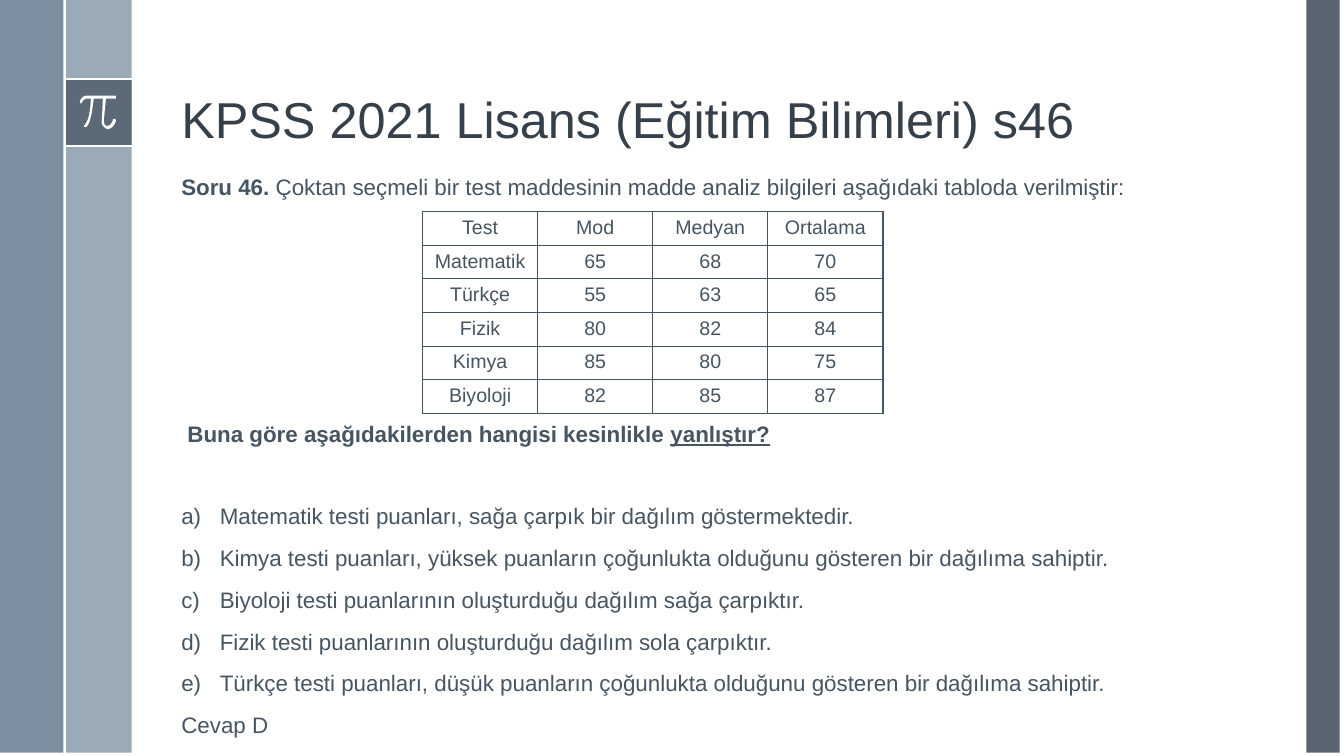
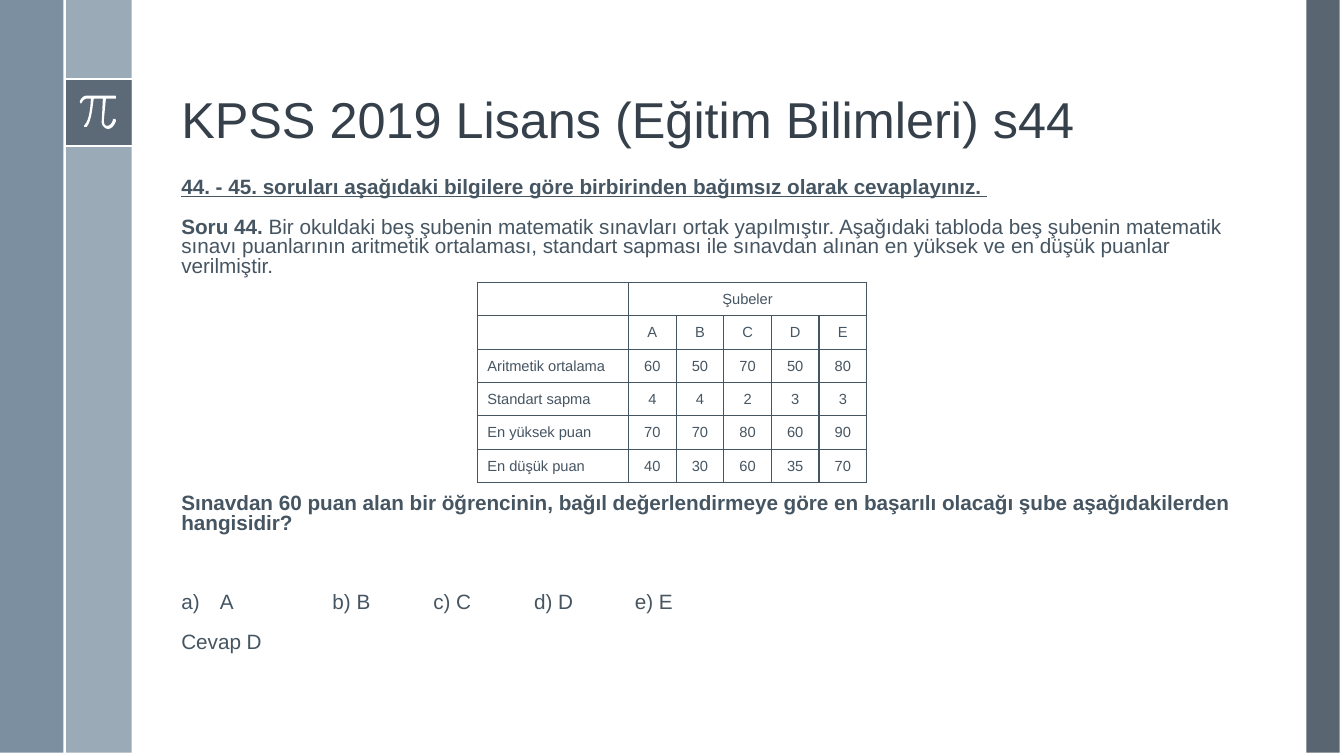
from lxml import etree
from pptx import Presentation
from pptx.dml.color import RGBColor
from pptx.enum.shapes import MSO_CONNECTOR, MSO_SHAPE
from pptx.enum.text import MSO_ANCHOR, PP_ALIGN
from pptx.oxml.ns import qn
from pptx.util import Cm, Pt

RECT = MSO_SHAPE.RECTANGLE
LINE = MSO_CONNECTOR.STRAIGHT
TOP, MID, LOW = MSO_ANCHOR.TOP, MSO_ANCHOR.MIDDLE, MSO_ANCHOR.BOTTOM
LEFT, MIDST = PP_ALIGN.LEFT, PP_ALIGN.CENTER

FONT = "Arial"
WHITE, INK, HEAD = "FFFFFF", "465562", "35404A"
SLATE, MIST, STEEL = "475562", "9BAAB7", "6A8093"
TEXT_X, TEXT_W, TEXT_Y = 4.32, 27.18, 4.37

PI = [
    [(7, 0)], [(2, 0), (0, 6), (0, 6)], [(1, 8)], [(2, 7)],
    [(2, 7), (4, 3), (7, 3)], [(11, 3)], [(11, 8), (10, 24), (5, 29)],
    [(4, 30), (4, 31), (5, 31)], [(7, 31)], [(12, 25), (13, 8), (14, 3)],
    [(23, 3)], [(22, 24)], [(22, 24), (21, 29), (24, 31)],
    [(25, 32), (26, 33), (28, 33)], [(29, 33)],
    [(34, 32), (36, 25), (36, 25)], [(36, 24), (35, 23), (35, 23)],
    [(34, 23), (33, 23), (33, 24)], [(33, 24), (32, 29), (28, 30)],
    [(27, 30), (26, 30), (25, 29)], [(24, 28), (24, 25), (24, 24)],
    [(26, 3)], [(35, 3)], [(36, 3), (36, 3), (36, 2)],
    [(36, 1), (36, 0), (35, 0)],
]


def tint(code):
    return RGBColor.from_string(code)


def node(root, tag, **atts):
    return etree.SubElement(root, qn(tag), **atts)


def paint(shape, code, alpha=100):
    shape.shadow.inherit = False
    shape.fill.solid()
    shape.fill.fore_color.rgb = tint(code)
    shape.line.fill.background()
    if alpha < 100:
        clr = shape.fill._xPr.find(".//" + qn("a:srgbClr"))
        node(clr, "a:alpha", val=str(alpha * 1000))


def block(slide, box, code, alpha=100):
    paint(slide.shapes.add_shape(RECT, *map(Cm, box)), code, alpha)


def rule(slide, *ends):
    line = slide.shapes.add_connector(LINE, *map(Cm, ends))
    line.line.color.rgb = tint(WHITE)
    line.line.width = Pt(1.5)
    node(line._element.spPr, "a:effectLst")


def trace(start, parts, steps=8):
    pts = [start]
    for part in parts:
        if len(part) == 1:
            pts += part
            continue
        a, (b, c, d) = pts[-1], part
        for i in range(1, steps + 1):
            t = i / steps
            u = 1 - t
            pts.append(tuple(
                u ** 3 * a[k] + 3 * u * u * t * b[k]
                + 3 * u * t * t * c[k] + t ** 3 * d[k] for k in (0, 1)))
    return [(x * 100, y * 100) for x, y in pts]


def sign(slide, x, y):
    pts = trace((35, 0), PI)
    form = slide.shapes.build_freeform(*pts[0], scale=Cm(0.0254) / 100)
    form.add_line_segments(pts[1:], close=True)
    paint(form.convert_to_shape(Cm(x), Cm(y)), WHITE)


def frame(slide):
    block(slide, (32.92, 0, 0.84, 18.97), SLATE, 90)
    x, y, size = 1.63, 1.98, 1.69
    block(slide, (x, 0, size, 18.97), MIST)
    block(slide, (0, 0, x - 0.03, 18.97), STEEL, 88)
    block(slide, (x, y, size, size), SLATE, 75)
    for edge in (y, y + size):
        rule(slide, x, edge, x + size, edge)
    sign(slide, x + 0.38, y + 0.43)
    rule(slide, x, 0, x, 18.97)


def write(para, runs, size, code=INK):
    for text, style in runs:
        run = para.add_run()
        run.text = text
        font = run.font
        font.name, font.size = FONT, Pt(size)
        font.color.rgb = tint(code)
        font.bold = "b" in style
        font.underline = "u" in style


def text(slide, box, paras, size, gap=0, code=INK, lead=0.8, anchor=TOP):
    area = slide.shapes.add_textbox(*map(Cm, box)).text_frame
    area.word_wrap = True
    area.vertical_anchor = anchor
    for i, runs in enumerate(paras):
        para = area.add_paragraph() if i else area.paragraphs[0]
        para.line_spacing = lead
        para.space_before = Pt(gap)
        write(para, runs, size, code)
    return area.paragraphs


def title(slide, name):
    text(slide, (TEXT_X, 0.43, TEXT_W, 3.45), [[(name, "")]], 36,
         code=HEAD, lead=0.9, anchor=LOW)


def body(slide, y, high, paras, size, gap):
    return text(slide, (TEXT_X, y, TEXT_W, high), paras, size, gap)


def choices(slide, y, items, reply, size, gap):
    paras = body(slide, y, len(items) + 1.2,
                 [[(t, "")] for t in items + [reply]], size, gap)
    for para in paras[:-1]:
        ppr = para._p.get_or_add_pPr()
        ppr.set("marL", str(Cm(0.97)))
        ppr.set("indent", str(-Cm(0.97)))
        node(ppr, "a:buFont", typeface=FONT)
        node(ppr, "a:buAutoNum", type="alphaLcParenR")


def border(cell):
    tcpr = cell._tc.get_or_add_tcPr()
    for side in "LRTB":
        line = node(tcpr, "a:ln" + side, w=str(Pt(1)))
        node(node(line, "a:solidFill"), "a:srgbClr", val=INK)
    cell.fill.background()


def grid(slide, x, y, cols, high, rows, size, anchor=TOP, left=False):
    shape = slide.shapes.add_table(
        len(rows), len(cols), Cm(x), Cm(y), Cm(sum(cols)),
        Cm(high * len(rows)))
    table = shape.table
    table.first_row = table.horz_banding = False
    for col, wide in zip(table.columns, cols):
        col.width = Cm(wide)
    for r, row in enumerate(rows):
        table.rows[r].height = Cm(high)
        for c, word in enumerate(row):
            cell = table.cell(r, c)
            border(cell)
            cell.vertical_anchor = anchor
            para = cell.text_frame.paragraphs[0]
            para.alignment = LEFT if left and c == 0 else MIDST
            if word:
                write(para, [(word, "")], size)
            else:
                node(para._p, "a:endParaRPr", sz=str(int(size * 100)))
    return table


def modes(slide):
    size, gap = 16, 14.5
    title(slide, "KPSS 2021 Lisans (Eğitim Bilimleri) s46")
    body(slide, TEXT_Y, 0.9, [[
        ("Soru 46. ", "b"),
        ("Çoktan seçmeli bir test maddesinin madde analiz bilgileri "
         "aşağıdaki tabloda verilmiştir:", "")]], size, gap)
    grid(slide, 10.65, 5.33, [2.9] * 4, 0.81, [
        ["Test", "Mod", "Medyan", "Ortalama"],
        ["Matematik", "65", "68", "70"],
        ["Türkçe", "55", "63", "65"],
        ["Fizik", "80", "82", "84"],
        ["Kimya", "85", "80", "75"],
        ["Biyoloji", "82", "85", "87"]], 14)
    body(slide, 10.59, 0.9, [[
        (" Buna göre aşağıdakilerden hangisi kesinlikle ", "b"),
        ("yanlıştır?", "bu")]], size, gap)
    choices(slide, 12.66, [
        "Matematik testi puanları, sağa çarpık bir dağılım göstermektedir.",
        "Kimya testi puanları, yüksek puanların çoğunlukta olduğunu "
        "gösteren bir dağılıma sahiptir.",
        "Biyoloji testi puanlarının oluşturduğu dağılım sağa çarpıktır.",
        "Fizik testi puanlarının oluşturduğu dağılım sola çarpıktır.",
        "Türkçe testi puanları, düşük puanların çoğunlukta olduğunu "
        "gösteren bir dağılıma sahiptir."], "Cevap D", size, gap)


def classes(slide):
    size, gap = 14.8, 14.2
    title(slide, "KPSS 2019 Lisans (Eğitim Bilimleri) s44")
    body(slide, TEXT_Y, 2.7, [
        [("44. - 45. soruları aşağıdaki bilgilere göre birbirinden bağımsız "
          "olarak cevaplayınız. ", "bu")],
        [("Soru 44.", "b"),
         (" Bir okuldaki beş şubenin matematik sınavları ortak yapılmıştır. "
          "Aşağıdaki tabloda beş şubenin matematik sınavı puanlarının "
          "aritmetik ortalaması, standart sapması ile sınavdan alınan en "
          "yüksek ve en düşük puanlar verilmiştir.", "")]], size, gap)
    table = grid(slide, 12.03, 7.12, [3.81] + [1.2] * 5, 0.84, [
        ["", "Şubeler", "", "", "", ""],
        ["", *"ABCDE"],
        ["Aritmetik ortalama", "60", "50", "70", "50", "80"],
        ["Standart sapma", "4", "4", "2", "3", "3"],
        ["En yüksek puan", "70", "70", "80", "60", "90"],
        ["En düşük puan", "40", "30", "60", "35", "70"]], 10.5, MID, True)
    table.cell(0, 1).merge(table.cell(0, 5))
    body(slide, 12.33, 1.3, [[
        ("Sınavdan 60 puan alan bir öğrencinin, bağıl değerlendirmeye göre "
         "en başarılı olacağı şube aşağıdakilerden hangisidir?", "b")]],
         size, gap)
    choices(slide, 14.83, ["A\t\tb) B\t\tc) C\t\td) D\t\te) E"],
            "Cevap D", size, gap)


def main():
    deck = Presentation()
    deck.slide_width, deck.slide_height = Cm(33.87), Cm(19.05)
    for fill in (modes, classes):
        slide = deck.slides.add_slide(deck.slide_layouts[6])
        frame(slide)
        fill(slide)
    deck.save("out.pptx")


if __name__ == "__main__":
    main()
